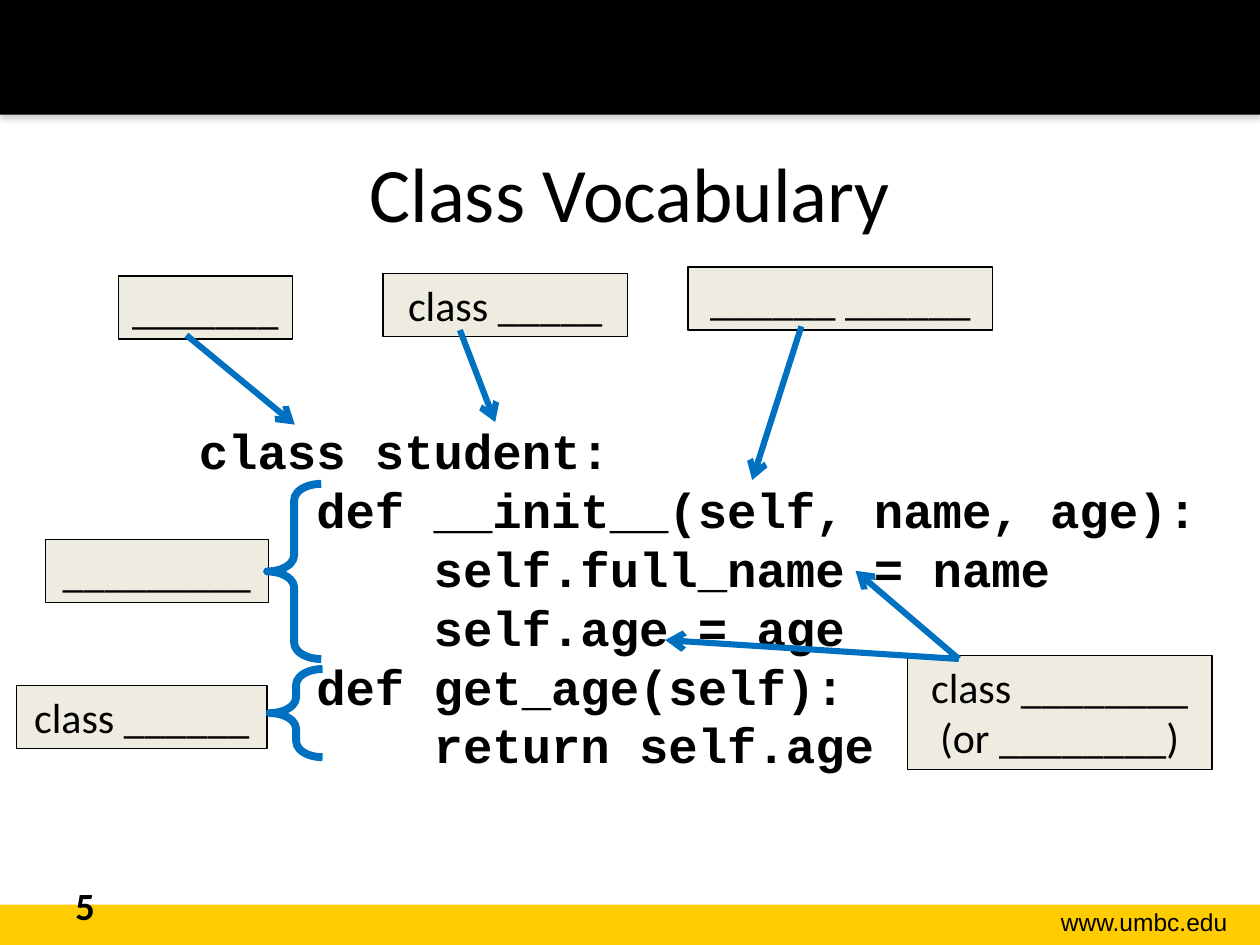
import pptx
import pptx.util
import pptx.dml.color
import pptx.enum.shapes
import pptx.enum.text
import pptx.oxml
import pptx.oxml.ns

Inches, Pt = pptx.util.Inches, pptx.util.Pt
RGB = pptx.dml.color.RGBColor
SHAPE = pptx.enum.shapes.MSO_SHAPE
ALIGN = pptx.enum.text.PP_ALIGN
ANCHOR = pptx.enum.text.MSO_ANCHOR
AUTO = pptx.enum.text.MSO_AUTO_SIZE

BLACK = RGB(0x00, 0x00, 0x00)
GOLD = RGB(0xFF, 0xCC, 0x00)
CREAM = RGB(0xEE, 0xEC, 0xE1)
BLUE = RGB(0x00, 0x70, 0xC0)

TITLE = "Class Vocabulary"
CODE = [
    "class student:",
    "    def __init__(self, name, age):",
    "        self.full_name = name",
    "        self.age = age",
    "    def get_age(self):",
    "        return self.age",
]
LABELS = [
    ("_______", (0.94, 2.19, 1.38, 0.5)),
    ("class _____", (3.04, 2.17, 1.94, 0.5)),
    ("______ ______", (5.46, 2.12, 2.42, 0.5)),
    ("_________", (0.36, 4.28, 1.77, 0.5)),
    ("class ________\n(or ________)", (7.2, 5.2, 2.42, 0.91)),
    ("class ______", (0.13, 5.44, 1.99, 0.5)),
]
ARROWS = [
    ((1.48, 2.66), (2.34, 3.37)),
    ((3.65, 2.62), (3.93, 3.35)),
    ((6.36, 2.59), (5.97, 3.81)),
    ((7.61, 5.23), (6.79, 4.53)),
    ((7.61, 5.23), (5.28, 5.08)),
]
BRACES = [(2.12, 3.84, 0.43, 1.39), (2.14, 5.31, 0.42, 0.7)]
BANDS = [(GOLD, (0, 7.18, 10, 0.32)), (BLACK, (0, 0, 10, 0.91))]

TITLE_FONT = {"name": "Calibri", "size": Pt(44)}
CODE_FONT = {"name": "Courier New", "size": Pt(28), "bold": True}
LABEL_FONT = {"name": "Calibri", "size": Pt(24)}
NUMBER_FONT = {"name": "Calibri", "size": Pt(22), "bold": True}
FOOTER_FONT = {"name": "Arial", "size": Pt(14)}

SHADOW = (
    '<a:effectLst %s><a:outerShdw blurRad="39370" dist="22860" dir="5400000"'
    ' rotWithShape="0"><a:srgbClr val="808080"><a:alpha val="35000"/>'
    "</a:srgbClr></a:outerShdw></a:effectLst>" % pptx.oxml.ns.nsdecls("a")
)
EMPTY_EFFECTS = "<a:effectLst %s/>" % pptx.oxml.ns.nsdecls("a")
ARROWHEAD = '<a:tailEnd %s type="arrow"/>' % pptx.oxml.ns.nsdecls("a")


def box(at):
    return [Inches(v) for v in at]


def write(sp, lines, font, align=ALIGN.LEFT, anchor=ANCHOR.TOP, auto=AUTO.NONE):
    tf = sp.text_frame
    for key, value in {"word_wrap": True, "auto_size": auto,
                       "vertical_anchor": anchor}.items():
        setattr(tf, key, value)
    for i, line in enumerate(lines):
        p = tf.add_paragraph() if i else tf.paragraphs[0]
        p.text = line
        p.alignment = align
        for r in p.runs:
            for key, value in font.items():
                setattr(r.font, key, value)
            r.font.color.rgb = BLACK


def add_shape(s, kind, at, fill=None, line=None, width=0):
    sp = s.shapes.add_shape(kind, *box(at))
    sp.shadow.inherit = False
    if fill is None:
        sp.fill.background()
    else:
        sp.fill.solid()
        sp.fill.fore_color.rgb = fill
    if line is None:
        sp.line.fill.background()
    else:
        sp.line.color.rgb = line
        sp.line.width = Pt(width)
    return sp


def add_text(s, at, lines, font, **style):
    write(s.shapes.add_textbox(*box(at)), lines, font, **style)


def add_arrow(s, start, end):
    c = s.shapes.add_connector(
        pptx.enum.shapes.MSO_CONNECTOR.STRAIGHT, *box(start + end))
    c.line.color.rgb = BLUE
    c.line.width = Pt(3.5)
    c.line._get_or_add_ln().append(pptx.oxml.parse_xml(ARROWHEAD))
    c._element.spPr.append(pptx.oxml.parse_xml(EMPTY_EFFECTS))


def main():
    prs = pptx.Presentation()
    prs.slide_width, prs.slide_height = Inches(10), Inches(7.5)
    s = prs.slides.add_slide(prs.slide_layouts[5])

    for fill, at in BANDS:
        band = add_shape(s, SHAPE.RECTANGLE, at, fill)
    spPr = band._element.spPr
    spPr.remove(spPr.find(pptx.oxml.ns.qn("a:effectLst")))
    spPr.append(pptx.oxml.parse_xml(SHADOW))

    title = s.shapes.title
    title.left, title.top, title.width, title.height = box((0.5, 0.9, 9, 1.25))
    write(title, [TITLE], TITLE_FONT, ALIGN.CENTER, ANCHOR.MIDDLE)

    add_text(s, (7.85, 7.15, 1.99, 0.34), ["www.umbc.edu"], FOOTER_FONT,
             align=ALIGN.RIGHT, auto=AUTO.SHAPE_TO_FIT_TEXT)
    add_text(s, (0.5, 6.95, 2.33, 0.4), ["5"], NUMBER_FONT)
    add_text(s, (1.48, 3.29, 8.21, 2.93), CODE, CODE_FONT,
             auto=AUTO.SHAPE_TO_FIT_TEXT)

    for text, at in LABELS:
        sp = add_shape(s, SHAPE.RECTANGLE, at, CREAM, BLACK, 0.75)
        write(sp, [text], LABEL_FONT, ALIGN.CENTER, auto=AUTO.SHAPE_TO_FIT_TEXT)
    for start, end in ARROWS:
        add_arrow(s, start, end)
    for at in BRACES:
        sp = add_shape(s, SHAPE.LEFT_BRACE, at, line=BLUE, width=4.5)
        sp.adjustments[0] = 0.3

    prs.save("out.pptx")


if __name__ == "__main__":
    main()
